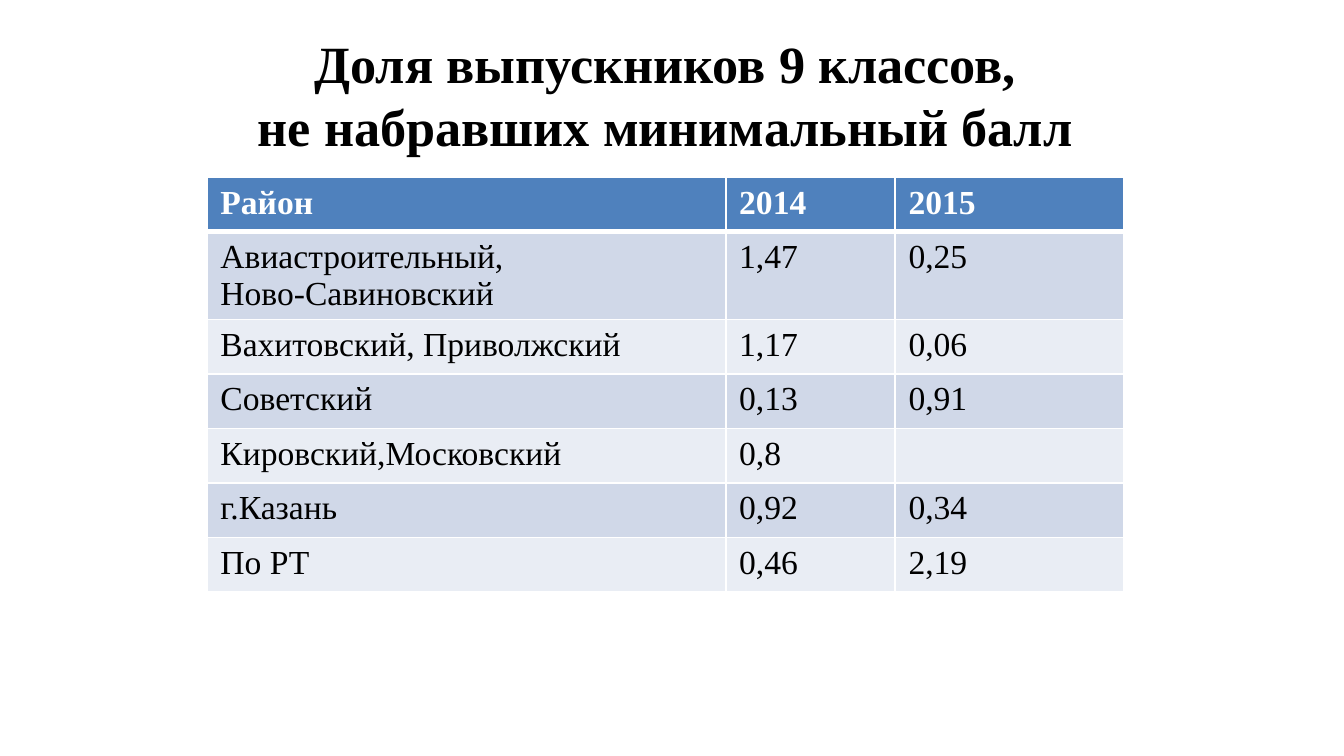
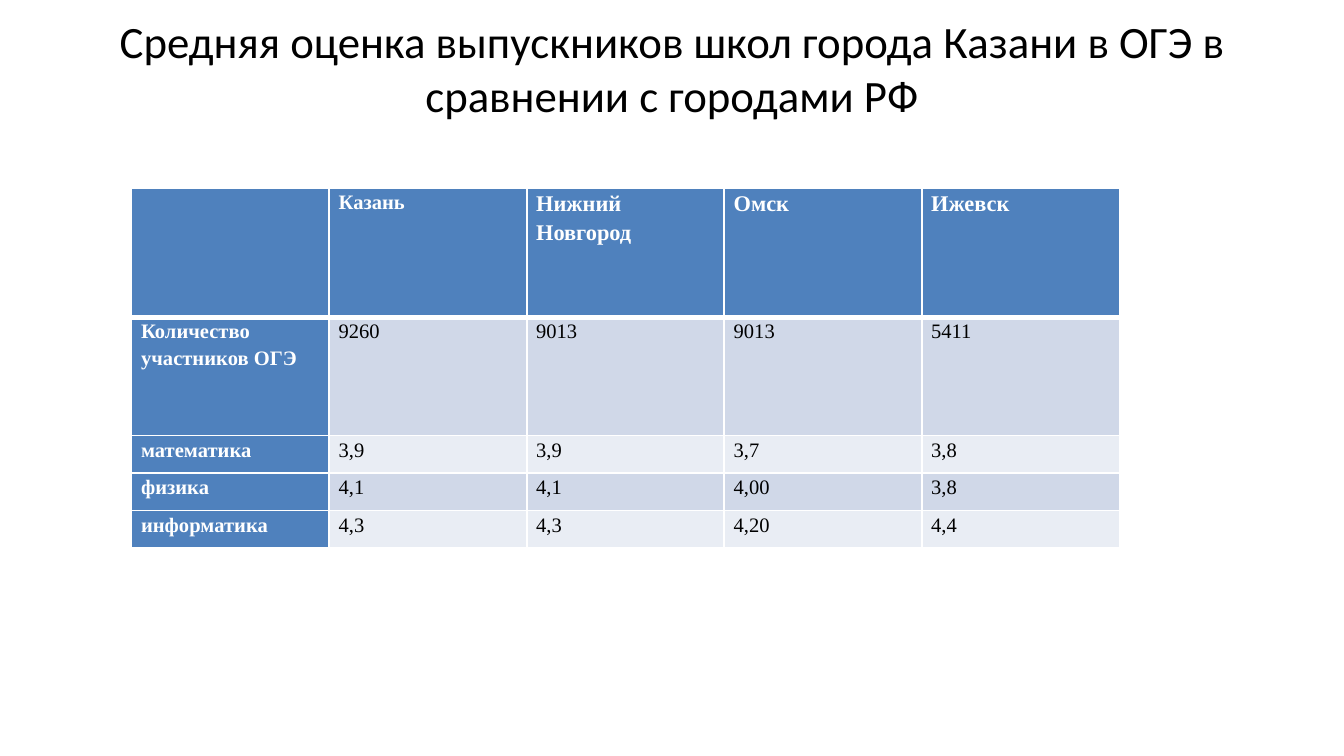
"""Builds two slides of exam results, each a title above a table."""
from dataclasses import dataclass

from lxml import etree
from pptx import Presentation
from pptx.dml.color import RGBColor
from pptx.enum.text import MSO_ANCHOR, MSO_AUTO_SIZE, PP_ALIGN
from pptx.oxml.ns import qn
from pptx.util import Inches, Pt

CENTER, LEFT = PP_ALIGN.CENTER, PP_ALIGN.LEFT
MIDDLE, TOP = MSO_ANCHOR.MIDDLE, MSO_ANCHOR.TOP
NO_FIT = MSO_AUTO_SIZE.NONE
TITLE_ONLY = 5


@dataclass(frozen=True)
class Theme:
    header: str = "4F81BD"
    bands: tuple = ("D0D8E8", "E9EDF4")
    ink: str = "000000"
    white: str = "FFFFFF"
    serif: str = "Times New Roman"
    sans: str = "Calibri"
    rule: float = 1
    header_rule: float = 3


THEME = Theme()
SLIDE_W = 10
SLIDE_H = SLIDE_W * 9 / 16
TITLE_BOX = (0.5, 0.23, 9, 0.94)

SLIDES = [
    dict(
        title="Доля выпускников 9 классов,\vне набравших минимальный балл",
        title_format=dict(size=28, bold=True, font=THEME.serif),
        title_insets=(0.2, 0.05),
        at=(1.54, 1.32),
        cols=[3.86, 1.26, 1.7],
        rows=[SLIDE_H * 0.072] * 7,
        side_header=False,
        insets=(0.1, 0.05),
        spacing=1.0,
        size=18,
        header_sizes=[18] * 3,
        cells=[
            ("Район", "2014", "2015"),
            ("Авиастроительный,\nНово-Савиновский", "1,47", "0,25"),
            ("Вахитовский, Приволжский", "1,17", "0,06"),
            ("Советский", "0,13", "0,91"),
            ("Кировский,Московский", "0,8", ""),
            ("г.Казань", "0,92", "0,34"),
            ("По РТ", "0,46", "2,19"),
        ],
    ),
    dict(
        title="Средняя оценка выпускников школ города Казани в ОГЭ в сравнении с городами РФ",
        title_format=dict(size=24, font=THEME.sans),
        title_insets=(0.1, 0.45),
        at=(0.98, 1.4),
        cols=[1.47] * 5,
        rows=[0.96, 0.88] + [0.28] * 3,
        side_header=True,
        insets=(0.07, 0),
        spacing=1.15,
        size=11,
        header_sizes=[11, 11, 12, 12, 12],
        cells=[
            ("", "Казань", "Нижний\nНовгород", "Омск", "Ижевск"),
            ("Количество\nучастников ОГЭ", "9260", "9013", "9013", "5411"),
            ("математика", "3,9", "3,9", "3,7", "3,8"),
            ("физика", "4,1", "4,1", "4,00", "3,8"),
            ("информатика", "4,3", "4,3", "4,20", "4,4"),
        ],
    ),
]


def write(tf, text, size, font, color=THEME.ink, bold=False, align=LEFT, spacing=1.0):
    """Fill a text frame, one paragraph per line of text."""
    for i, line in enumerate(text.split("\n")):
        p = tf.add_paragraph() if i else tf.paragraphs[0]
        p.text = line
        p.alignment = align
        p.line_spacing = spacing
        for r in p.runs:
            r.font.size, r.font.name, r.font.bold = Pt(size), font, bold
            r.font.color.rgb = RGBColor.from_string(color)


def set_borders(cell, **widths):
    """Draw white rules on the four sides of a cell."""
    tcPr = cell._tc.get_or_add_tcPr()
    for side in ("L", "R", "T", "B"):
        width = Pt(widths.get(side, THEME.rule))
        ln = etree.SubElement(tcPr, qn(f"a:ln{side}"), w=str(width))
        fill = etree.SubElement(ln, qn("a:solidFill"))
        etree.SubElement(fill, qn("a:srgbClr"), val=THEME.white)


def add_title(slide, data):
    """Place and format the title placeholder."""
    sp = slide.shapes.title
    sp.left, sp.top, sp.width, sp.height = map(Inches, TITLE_BOX)
    tf = sp.text_frame
    tf.word_wrap, tf.auto_size, tf.vertical_anchor = True, NO_FIT, MIDDLE
    tf.margin_left, tf.margin_top = Inches(0.1), Inches(0.05)
    tf.margin_right, tf.margin_bottom = map(Inches, data["title_insets"])
    write(tf, data["title"], align=CENTER, **data["title_format"])


def format_cell(cell, text, row, col, data):
    """Give a cell its rules, fill and text."""
    is_header = row == 0 or (data["side_header"] and col == 0)
    heavy = {0: {"B": THEME.header_rule}, 1: {"T": THEME.header_rule}}
    set_borders(cell, **heavy.get(row, {}))
    cell.fill.solid()
    fill = THEME.header if is_header else THEME.bands[(row - 1) % 2]
    cell.fill.fore_color.rgb = RGBColor.from_string(fill)
    cell.vertical_anchor = TOP
    across, down = map(Inches, data["insets"])
    cell.margin_left = cell.margin_right = across
    cell.margin_top = cell.margin_bottom = down
    write(
        cell.text_frame,
        text,
        size=data["size"] if row else data["header_sizes"][col],
        font=THEME.serif,
        color=THEME.white if is_header else THEME.ink,
        bold=is_header,
        spacing=data["spacing"],
    )


def add_results(slide, data):
    """Add the results table."""
    cols, rows = data["cols"], data["rows"]
    box = map(Inches, (*data["at"], sum(cols), sum(rows)))
    table = slide.shapes.add_table(len(rows), len(cols), *box).table
    table.first_col = data["side_header"]
    for column, width in zip(table.columns, cols):
        column.width = Inches(width)
    for line, height in zip(table.rows, rows):
        line.height = Inches(height)
    for row, texts in enumerate(data["cells"]):
        for col, text in enumerate(texts):
            format_cell(table.cell(row, col), text, row, col, data)


def main():
    """Build and save the presentation."""
    prs = Presentation()
    prs.slide_width, prs.slide_height = Inches(SLIDE_W), Inches(SLIDE_H)
    for data in SLIDES:
        slide = prs.slides.add_slide(prs.slide_layouts[TITLE_ONLY])
        add_title(slide, data)
        add_results(slide, data)
    prs.save("out.pptx")


if __name__ == "__main__":
    main()
